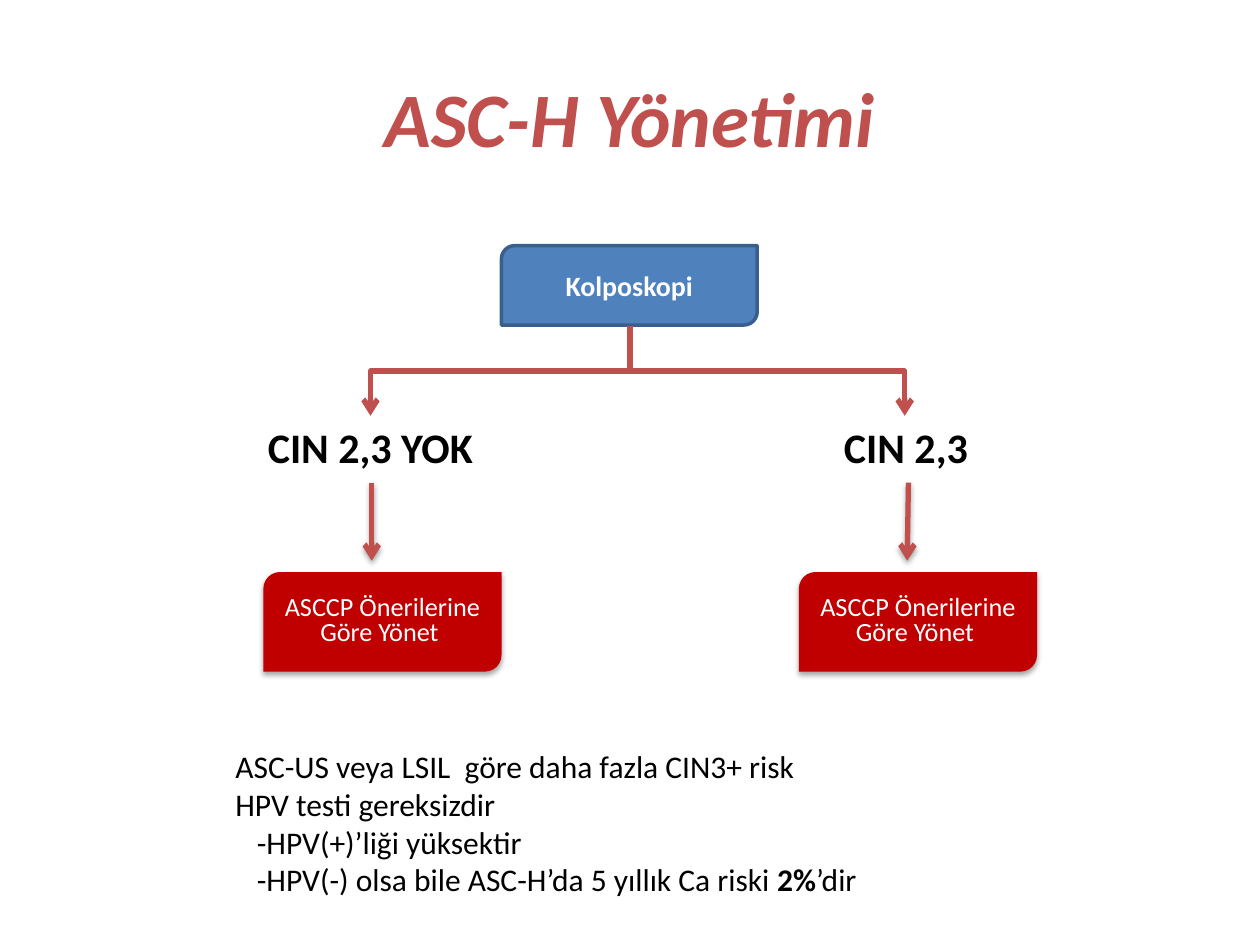
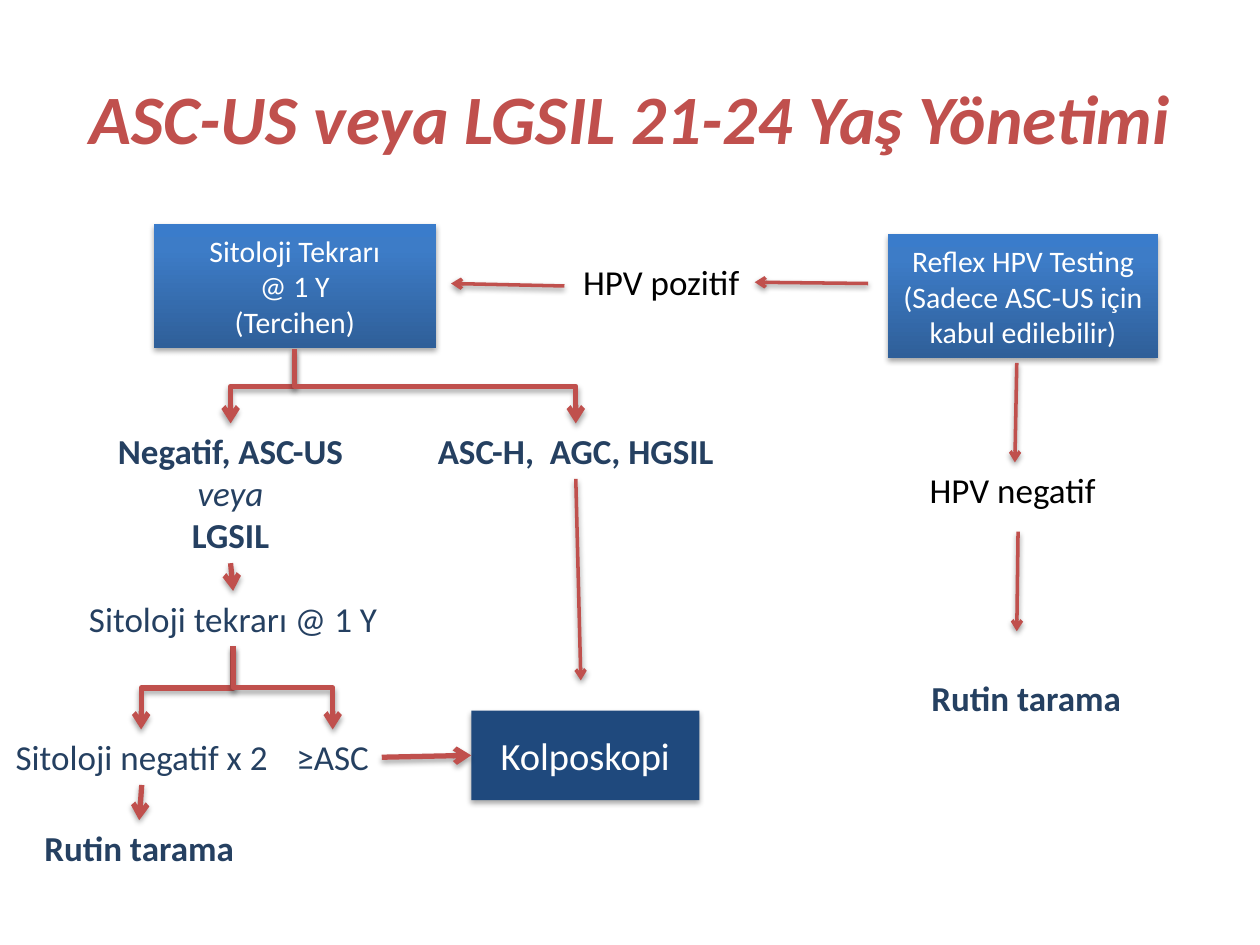
import copy

import lxml.etree
import pptx
import pptx.dml.color
import pptx.enum.shapes
import pptx.enum.text
import pptx.oxml.ns
import pptx.util

RED = pptx.dml.color.RGBColor(0xC0, 0x50, 0x4D)
DARK_RED = pptx.dml.color.RGBColor(0xC0, 0x00, 0x00)
BLUE = pptx.dml.color.RGBColor(0x4F, 0x81, 0xBD)
BLUE_EDGE = pptx.dml.color.RGBColor(0x3A, 0x5F, 0x8C)
NAVY = pptx.dml.color.RGBColor(0x1F, 0x49, 0x7D)
INK = pptx.dml.color.RGBColor(0x25, 0x40, 0x61)
BLACK = pptx.dml.color.RGBColor(0x00, 0x00, 0x00)
WHITE = pptx.dml.color.RGBColor(0xFF, 0xFF, 0xFF)
GRADIENT = [
    (0, pptx.dml.color.RGBColor(0x2F, 0x5F, 0x99)),
    (0.8, pptx.dml.color.RGBColor(0x3D, 0x7C, 0xC7)),
    (1, pptx.dml.color.RGBColor(0x3A, 0x7C, 0xCB)),
]

FONT = "Calibri"
THICK, THIN = 3, 2
TOP, LEFT, BOTTOM, RIGHT = range(4)
CENTER = pptx.enum.text.PP_ALIGN.CENTER
START = pptx.enum.text.PP_ALIGN.LEFT
ROUNDED = pptx.enum.shapes.MSO_SHAPE.ROUND_2_DIAG_RECTANGLE
RECTANGLE = pptx.enum.shapes.MSO_SHAPE.RECTANGLE
STRAIGHT = pptx.enum.shapes.MSO_CONNECTOR.STRAIGHT
ELBOW = pptx.enum.shapes.MSO_CONNECTOR.ELBOW
qn = pptx.oxml.ns.qn

presentation = pptx.Presentation()
presentation.slide_width = pptx.util.Inches(10)
presentation.slide_height = pptx.util.Inches(7.5)
COLUMN = presentation.slide_width // 100
ROW = presentation.slide_height // 75
TITLE_AREA = (5, 3, 90, 12.5)
NOTE_INDENT = 1.7


def write(shape, paragraphs, size, color, align=CENTER, spacing=None):
    frame = shape.text_frame
    for index, runs in enumerate(paragraphs):
        paragraph = frame.add_paragraph() if index else frame.paragraphs[0]
        paragraph.alignment = align
        paragraph.line_spacing = spacing
        for text, style in runs:
            run = paragraph.add_run()
            run.text = text
            run.font.name = FONT
            run.font.size = pptx.util.Pt(size)
            run.font.color.rgb = color
            run.font.bold = "b" in style
            run.font.italic = "i" in style


def set_shadow(shape, alpha, distance):
    properties = shape._element.spPr
    effects = properties.find(qn("a:effectLst"))
    if effects is None:
        effects = lxml.etree.SubElement(properties, qn("a:effectLst"))
    if alpha:
        shadow = lxml.etree.SubElement(effects, qn("a:outerShdw"), blurRad="40000",
                                       dist=str(distance), dir="5400000", rotWithShape="0")
        tint = lxml.etree.SubElement(shadow, qn("a:srgbClr"), val="000000")
        lxml.etree.SubElement(tint, qn("a:alpha"), val=str(alpha * 1000))


advice = [[("ASCCP Önerilerine Göre Yönet ", "")]]
routine = [[("Rutin tarama", "b")]]

flows = [
    {
        "title": "ASC-H Yönetimi",
        "title size": 44,
        "fork shadow": 0,
        "boxes": {
            "colposcopy": (ROUNDED, (39.8, 19.5, 20.3, 6.3), BLUE, 16, [[("Kolposkopi", "b")]], None),
            "absent advice": (ROUNDED, (20.9, 45.4, 18.9, 7.9), DARK_RED, 15, advice, 0.8),
            "present advice": (ROUNDED, (63.4, 45.4, 18.9, 7.9), DARK_RED, 15, advice, 0.8),
        },
        "labels": {
            "absent": ((20.1, 33, 18.6, 5), 24, BLACK, CENTER, [[("CIN 2,3 YOK", "b")]]),
            "present": ((65.9, 33, 12, 5), 24, BLACK, CENTER, [[("CIN 2,3", "b")]]),
        },
        "forks": [((50, 25.9), [(29.4, 33), (71.8, 33)])],
        "arrows": [
            ((29.5, 38.3), (29.5, 44.5), THICK),
            ((72.1, 38.3), (72, 44.5), THICK),
        ],
    },
    {
        "title": "ASC-US veya LGSIL 21-24 Yaş Yönetimi",
        "title size": 39.6,
        "fork shadow": 35,
        "boxes": {
            "repeat cytology": (RECTANGLE, (12.2, 17.8, 22.4, 9.8), GRADIENT, 17,
                                [[("Sitoloji Tekrarı", "")], [("@ 1 Y", "")], [("(Tercihen)", "")]], None),
            "reflex testing": (RECTANGLE, (70.5, 18.6, 21.4, 9.8), GRADIENT, 17,
                               [[("Reflex HPV Testing", "")],
                                [("(Sadece ASC-US için kabul edilebilir)", "")]], None),
            "colposcopy": (RECTANGLE, (37.4, 56.4, 18.1, 7.1), NAVY, 22, [[("Kolposkopi", "")]], None),
        },
        "labels": {
            "low grade": ((8.1, 33.6, 20.4, 11.1), 20, INK, CENTER,
                          [[("Negatif, ASC-US", "b")], [("veya", "i")], [("LGSIL", "b")]]),
            "high grade": ((33.5, 33.6, 24.4, 4.4), 20, INK, CENTER, [[("ASC-H,  AGC, HGSIL", "b")]]),
            "second cytology": ((5.9, 46.9, 25.2, 4.4), 20, INK, CENTER, [[("Sitoloji tekrarı @ 1 Y", "")]]),
            "negative twice": ((0.1, 57.9, 22.3, 4.4), 20, INK, CENTER, [[("Sitoloji negatif x 2", "")]]),
            "abnormal": ((22.5, 57.9, 7.8, 4.4), 20, INK, CENTER, [[("≥ASC", "")]]),
            "cytology routine": ((2.4, 65.1, 17.3, 4.4), 20, INK, CENTER, routine),
            "reflex routine": ((72.8, 53.2, 17.3, 4.4), 20, INK, CENTER, routine),
            "positive": ((45.3, 20.2, 14.6, 4.4), 20, BLACK, START, [[("HPV pozitif", "")]]),
            "negative": ((72.8, 36.7, 15.5, 4.4), 20, BLACK, START, [[("HPV negatif", "")]]),
        },
        "forks": [
            ((23.4, 27.7), [(18.3, 33.6), (45.7, 33.6)]),
            ((18.5, 51.3), [(11.2, 57.9), (26.4, 57.9)]),
        ],
        "arrows": [
            (("low grade", BOTTOM), ("second cytology", TOP), THICK),
            (("negative twice", BOTTOM), ("cytology routine", TOP), THICK),
            (("abnormal", RIGHT), ("colposcopy", LEFT), THICK),
            (("high grade", BOTTOM), (46.1, 54), THIN),
            ((80.7, 28.8), ("negative", TOP), THIN),
            ((80.8, 42.2), (80.7, 50.1), THIN),
            ((68.9, 22.5), ("positive", RIGHT), THIN),
            ((44.8, 22.7), (35.8, 22.5), THIN),
        ],
    },
]

for flow in flows:
    slide = presentation.slides.add_slide(presentation.slide_layouts[6])
    nodes = {}
    connectors = []

    left, top, width, height = TITLE_AREA
    title = slide.shapes.add_textbox(left * COLUMN, top * ROW, width * COLUMN, height * ROW)
    title.text_frame.word_wrap = True
    title.text_frame.vertical_anchor = pptx.enum.text.MSO_ANCHOR.MIDDLE
    write(title, [[(flow["title"], "bi")]], flow["title size"], RED)

    for name, (preset, area, fill, size, paragraphs, spacing) in flow["boxes"].items():
        left, top, width, height = area
        box = slide.shapes.add_shape(preset, int(left * COLUMN), int(top * ROW),
                                     int(width * COLUMN), int(height * ROW))
        box.shadow.inherit = False
        if fill is GRADIENT:
            box.fill.gradient()
            box.fill.gradient_angle = 90
            stop_list = box._element.spPr.find(".//" + qn("a:gsLst"))
            stop_list.append(copy.deepcopy(stop_list[-1]))
            for stop, (position, color) in zip(box.fill.gradient_stops, GRADIENT):
                stop.position = position
                stop.color.rgb = color
        else:
            box.fill.solid()
            box.fill.fore_color.rgb = fill
        if fill is BLUE:
            box.line.color.rgb = BLUE_EDGE
            box.line.width = pptx.util.Pt(2)
        else:
            box.line.fill.background()
            set_shadow(box, 35, 23000)
        box.text_frame.vertical_anchor = pptx.enum.text.MSO_ANCHOR.MIDDLE
        write(box, paragraphs, size, WHITE, spacing=spacing)
        nodes[name] = box

    for name, (area, size, color, align, paragraphs) in flow["labels"].items():
        left, top, width, height = area
        label = slide.shapes.add_textbox(int(left * COLUMN), int(top * ROW),
                                         int(width * COLUMN), int(height * ROW))
        label.text_frame.word_wrap = False
        label.text_frame.auto_size = pptx.enum.text.MSO_AUTO_SIZE.SHAPE_TO_FIT_TEXT
        write(label, paragraphs, size, color, align)
        nodes[name] = label

    for (start_x, start_y), ends in flow["forks"]:
        for end_x, end_y in ends:
            side = 1 if end_x > start_x else -1
            middle_x, middle_y = (start_x + end_x) / 2, (start_y + end_y) / 2
            half_drop, half_span = (end_y - start_y) / 2, abs(end_x - start_x) / 2
            branch = slide.shapes.add_connector(
                ELBOW,
                int((middle_x + side * half_drop) * COLUMN), int((middle_y - half_span) * ROW),
                int((middle_x - side * half_drop) * COLUMN), int((middle_y + half_span) * ROW))
            branch._element.spPr.find(qn("a:xfrm")).set("rot", "16200000" if side > 0 else "5400000")
            connectors.append((branch, THICK, flow["fork shadow"], 23000))

    for start, end, weight in flow["arrows"]:
        points = [(0, 0) if point[0] in nodes else point for point in (start, end)]
        (start_x, start_y), (end_x, end_y) = points
        arrow = slide.shapes.add_connector(STRAIGHT, int(start_x * COLUMN), int(start_y * ROW),
                                           int(end_x * COLUMN), int(end_y * ROW))
        if start[0] in nodes:
            arrow.begin_connect(nodes[start[0]], start[1])
        if end[0] in nodes:
            arrow.end_connect(nodes[end[0]], end[1])
        alpha, distance = (35, 23000) if weight == THICK else (38, 20000)
        connectors.append((arrow, weight, alpha, distance))

    for connector, weight, alpha, distance in connectors:
        connector.line.color.rgb = RED
        connector.line.width = pptx.util.Pt(weight)
        outline = connector._element.spPr.find(qn("a:ln"))
        lxml.etree.SubElement(outline, qn("a:tailEnd"), type="arrow")
        set_shadow(connector, alpha, distance)

notes = presentation.slides[0].shapes.add_textbox(int(17.7 * COLUMN), int(58.8 * ROW),
                                                  int(67.7 * COLUMN), int(13.1 * ROW))
notes.text_frame.word_wrap = True
notes.text_frame.auto_size = pptx.enum.text.MSO_AUTO_SIZE.SHAPE_TO_FIT_TEXT
write(notes, [
    [("ASC-US veya LSIL  göre daha fazla CIN3+ risk", "")],
    [("HPV testi gereksizdir", "")],
    [("-HPV(+)’liği yüksektir", "")],
    [("-HPV(-) olsa bile ASC-H’da 5 yıllık Ca riski ", ""), ("2%", "b"), ("’dir", "")],
], 18, BLACK, START)
for paragraph in notes.text_frame.paragraphs[2:]:
    paragraph._p.get_or_add_pPr().set("marL", str(int(NOTE_INDENT * COLUMN)))

presentation.save("out.pptx")
